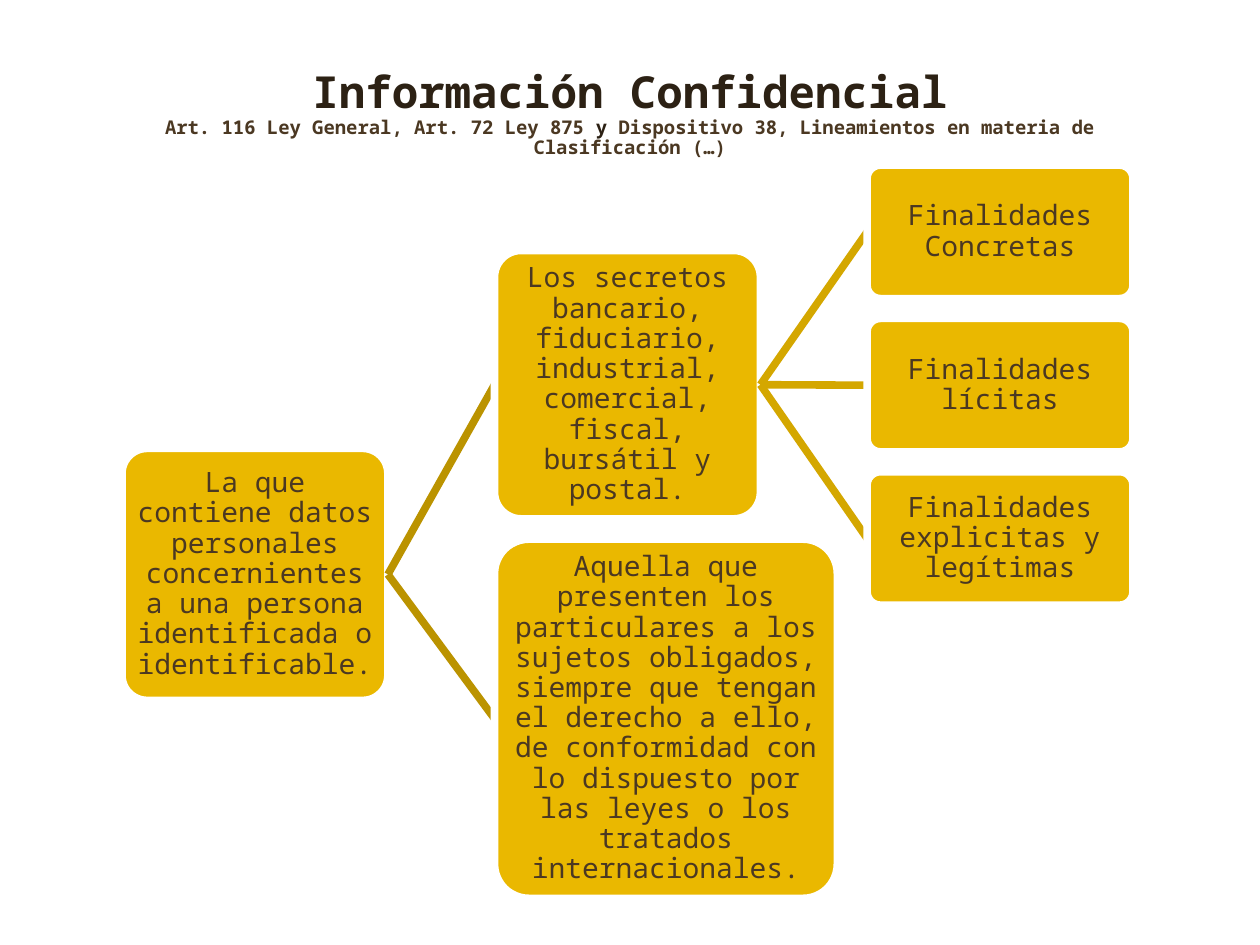
import pptx
import pptx.dml.color
import pptx.enum.shapes
import pptx.enum.text
import pptx.oxml.ns
import pptx.util
from lxml import etree
from pptx.util import Cm

COLORS = {
    "gold": "EAB800",
    "first_branch": "BB9300",
    "second_branch": "D4A700",
    "white": "FFFFFF",
    "title": "2C2114",
    "text": "4B3822",
}
FONT = "Noto Sans Mono"
LINE_WIDTH = 4.33
COLUMN_LEFT, COLUMN_STEP = 2.46, 7.51
BOX_WIDTH = 5.36
PURPOSE_TOP, PURPOSE_STEP, PURPOSE_HEIGHT = 3.33, 3.09, 2.69
LEFT_SIDE, RIGHT_SIDE = 1, 3


def rgb(name):
    return pptx.dml.color.RGBColor.from_string(COLORS[name])


def add_text(paragraph, text, size=16, color="text", bold=False):
    run = paragraph.add_run()
    run.text = text
    run.font.name = FONT
    run.font.size = pptx.util.Pt(size)
    run.font.bold = bold
    run.font.color.rgb = rgb(color)
    paragraph.alignment = pptx.enum.text.PP_ALIGN.CENTER
    paragraph.line_spacing = 0.9


def add_heading(slide):
    shape = slide.shapes.add_textbox(Cm(1.9), Cm(1.3), Cm(21.6), Cm(3.6))
    frame = shape.text_frame
    frame.word_wrap = True
    add_text(frame.paragraphs[0], "Información Confidencial", size=25.2, color="title", bold=True)
    subtitle = frame.add_paragraph()
    for text, color in (
        ("Art. 116 Ley General, Art. 72 Ley 875 ", "text"),
        ("y ", "title"),
        ("Dispositivo 38, Lineamientos en materia de Clasificación (…)", "text"),
    ):
        add_text(subtitle, text, size=10.8, color=color, bold=True)


def add_box(slide, text, column, top, height, width=BOX_WIDTH):
    shape = slide.shapes.add_shape(
        pptx.enum.shapes.MSO_SHAPE.ROUNDED_RECTANGLE,
        Cm(COLUMN_LEFT + column * COLUMN_STEP), Cm(top), Cm(width), Cm(height),
    )
    shape.adjustments[0] = 0.1
    shape.shadow.inherit = False
    shape.fill.solid()
    shape.fill.fore_color.rgb = rgb("gold")
    shape.line.color.rgb = rgb("white")
    shape.line.width = pptx.util.Pt(LINE_WIDTH)
    frame = shape.text_frame
    frame.word_wrap = True
    frame.vertical_anchor = pptx.enum.text.MSO_ANCHOR.MIDDLE
    frame.margin_left = frame.margin_right = Cm(0.03)
    frame.margin_top = frame.margin_bottom = Cm(0.03)
    add_text(frame.paragraphs[0], text)
    return shape


def add_branch(slide, parent, child, color):
    """Join parent to child, with the line end hidden behind the child's border."""
    connector = slide.shapes.add_connector(
        pptx.enum.shapes.MSO_CONNECTOR.STRAIGHT, 0, 0, 0, 0
    )
    connector.begin_connect(parent, RIGHT_SIDE)
    connector.end_connect(child, LEFT_SIDE)
    connector.line.color.rgb = rgb(color)
    connector.line.width = pptx.util.Pt(LINE_WIDTH)
    etree.SubElement(connector._element.spPr, pptx.oxml.ns.qn("a:effectLst"))
    child._element.addprevious(connector._element)


def main():
    presentation = pptx.Presentation()
    presentation.slide_width = Cm(25.4)
    presentation.slide_height = Cm(19.05)
    slide = presentation.slides.add_slide(presentation.slide_layouts[6])

    add_heading(slide)
    personal_data = add_box(
        slide,
        "La que contiene datos personales concernientes a una persona "
        "identificada o identificable.",
        column=0, top=9.04, height=5.08,
    )
    secrets = add_box(
        slide,
        "Los secretos bancario, fiduciario, industrial, comercial, fiscal, "
        "bursátil y postal.",
        column=1, top=5.05, height=5.41,
    )
    add_branch(slide, personal_data, secrets, "first_branch")

    purposes = ("Concretas", "lícitas", "explicitas y legítimas")
    for row, purpose in enumerate(purposes):
        box = add_box(
            slide, f"Finalidades {purpose}",
            column=2, top=PURPOSE_TOP + row * PURPOSE_STEP, height=PURPOSE_HEIGHT,
        )
        add_branch(slide, secrets, box, "second_branch")

    submissions = add_box(
        slide,
        "Aquella que presenten los particulares a los sujetos obligados, "
        "siempre que tengan el derecho a ello, de conformidad con lo dispuesto "
        "por las leyes o los tratados internacionales.",
        column=1, top=10.87, height=7.24, width=6.91,
    )
    add_branch(slide, personal_data, submissions, "first_branch")
    presentation.save("out.pptx")


if __name__ == "__main__":
    main()
